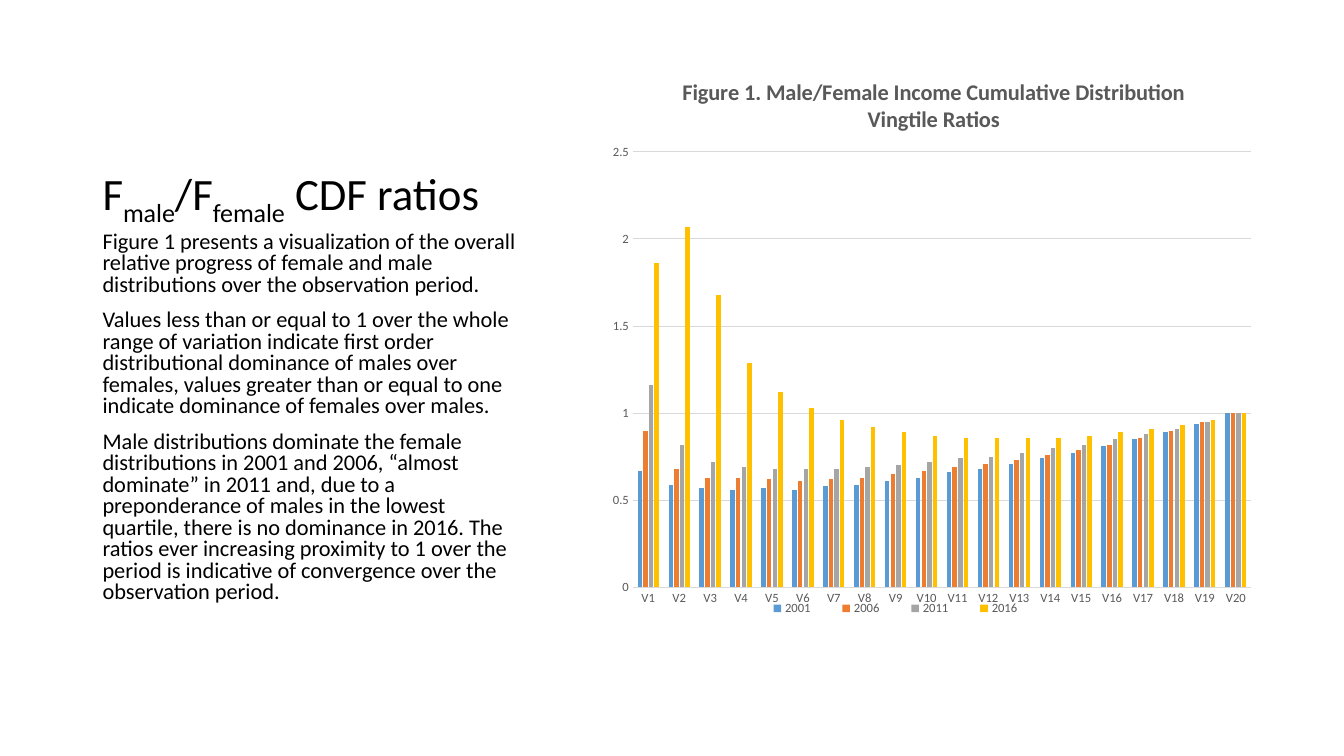
from lxml.etree import SubElement
from pptx import Presentation
from pptx.chart.data import CategoryChartData
from pptx.dml.color import RGBColor
from pptx.enum.chart import XL_CHART_TYPE, XL_LEGEND_POSITION, XL_TICK_MARK
from pptx.enum.text import MSO_ANCHOR, MSO_AUTO_SIZE, PP_ALIGN
from pptx.oxml.ns import qn
from pptx.util import Cm, Pt

FONT = "Calibri"
BLACK = RGBColor(0x00, 0x00, 0x00)
GRAY = RGBColor(0x59, 0x59, 0x59)
LIGHT_GRAY = RGBColor(0xD9, 0xD9, 0xD9)
BLUE = RGBColor(0x5B, 0x9B, 0xD5)
ORANGE = RGBColor(0xED, 0x7D, 0x31)
SILVER = RGBColor(0xA5, 0xA5, 0xA5)
GOLD = RGBColor(0xFF, 0xC0, 0x00)

TITLE_PARTS = [("F", 0), ("male", -25000), ("/F", 0), ("female", -25000), (" CDF ratios", 0)]
BODY_TEXTS = [
    "Figure 1 presents a visualization of the overall relative progress of female and male "
    "distributions over the observation period.",
    "Values less than or equal to 1 over the whole range of variation indicate first order "
    "distributional dominance of males over females, values greater than or equal to one "
    "indicate dominance of females over males.",
    "Male distributions dominate the female distributions in 2001 and 2006, “almost dominate” "
    "in 2011 and, due to a preponderance of males in the lowest quartile, there is no dominance "
    "in 2016. The ratios ever increasing proximity to 1 over the period is indicative of "
    "convergence over the observation period.",
]
CHART_TITLE = "Figure 1. Male/Female Income Cumulative Distribution\vVingtile Ratios"
RATIOS = [
    ("2001", BLUE, [0.67, 0.59, 0.57, 0.56, 0.57, 0.56, 0.58, 0.59, 0.61, 0.63,
                    0.66, 0.68, 0.71, 0.74, 0.77, 0.81, 0.85, 0.89, 0.94, 1]),
    ("2006", ORANGE, [0.9, 0.68, 0.63, 0.63, 0.62, 0.61, 0.62, 0.63, 0.65, 0.67,
                      0.69, 0.71, 0.73, 0.76, 0.79, 0.82, 0.86, 0.9, 0.95, 1]),
    ("2011", SILVER, [1.16, 0.82, 0.72, 0.69, 0.68, 0.68, 0.68, 0.69, 0.7, 0.72,
                      0.74, 0.75, 0.77, 0.8, 0.82, 0.85, 0.88, 0.91, 0.95, 1]),
    ("2016", GOLD, [1.86, 2.07, 1.68, 1.29, 1.12, 1.03, 0.96, 0.92, 0.89, 0.87,
                    0.86, 0.86, 0.86, 0.86, 0.87, 0.89, 0.91, 0.93, 0.96, 1]),
]


def format_font(font, size, color, bold=False):
    font.name = FONT
    font.size = Pt(size)
    font.bold = bold
    font.color.rgb = color


def place_box(box, left, top, width, height, anchor):
    box.left, box.top, box.width, box.height = Cm(left), Cm(top), Cm(width), Cm(height)
    frame = box.text_frame
    frame.word_wrap = True
    frame.auto_size = MSO_AUTO_SIZE.NONE
    frame.vertical_anchor = anchor


def add_span(para, text, size, baseline=0):
    span = para.add_run()
    span.text = text
    format_font(span.font, size, BLACK)
    if baseline:
        span._r.get_or_add_rPr().set("baseline", str(baseline))


def write_title(box):
    para = box.text_frame.paragraphs[0]
    para.alignment = PP_ALIGN.LEFT
    para.line_spacing = 0.9
    for text, baseline in TITLE_PARTS:
        add_span(para, text, 32, baseline)


def write_body(box):
    frame = box.text_frame
    for number, text in enumerate(BODY_TEXTS):
        para = frame.add_paragraph() if number else frame.paragraphs[0]
        para.line_spacing = 0.8
        para.space_before = Pt(10)
        add_span(para, text, 16)


def set_layout(element, index, **settings):
    for old in element.findall(qn("c:layout")):
        element.remove(old)
    layout = SubElement(element, qn("c:layout"))
    manual = SubElement(layout, qn("c:manualLayout"))
    for name, value in settings.items():
        SubElement(manual, qn(f"c:{name}")).set("val", str(value))
    element.insert(index, layout)


def format_axis(axis):
    axis.major_tick_mark = axis.minor_tick_mark = XL_TICK_MARK.NONE
    format_font(axis.tick_labels.font, 9, GRAY)


def add_ratio_chart(page):
    data = CategoryChartData()
    data.categories = [f"V{number}" for number in range(1, 21)]
    for year, _, values in RATIOS:
        data.add_series(year, values)
    chart = page.shapes.add_chart(XL_CHART_TYPE.COLUMN_CLUSTERED, Cm(15.11), Cm(1.27),
                                  Cm(16.76), Cm(15.04), data).chart
    format_font(chart.font, 10, BLACK)

    title = chart.chart_title
    title.text_frame.text = CHART_TITLE.split("\v")[0]
    para = title.text_frame.paragraphs[0]
    para.add_line_break()
    para.add_run().text = CHART_TITLE.split("\v")[1]
    for span in para.runs:
        format_font(span.font, 16, GRAY, bold=True)
    title.include_in_layout = False

    plot = chart.plots[0]
    plot.gap_width = 219
    plot.overlap = -27
    plot.vary_by_categories = False
    for series, (_, color, _) in zip(plot.series, RATIOS):
        series.format.fill.solid()
        series.format.fill.fore_color.rgb = color

    format_axis(chart.category_axis)
    format_axis(chart.value_axis)
    chart.value_axis.minimum_scale = 0
    chart.value_axis.maximum_scale = 2.5
    chart.value_axis.major_unit = 0.5
    chart.value_axis.format.line.fill.background()
    for line in (chart.category_axis.format.line, chart.value_axis.major_gridlines.format.line):
        line.color.rgb = LIGHT_GRAY
        line.width = Pt(0.75)

    chart.has_legend = True
    chart.legend.position = XL_LEGEND_POSITION.BOTTOM
    chart.legend.include_in_layout = False
    format_font(chart.legend.font, 9, GRAY)

    set_layout(title._element, 1, xMode="edge", yMode="edge", x=0.12, y=0.04)
    set_layout(chart._chartSpace.chart.plotArea, 0, layoutTarget="inner",
               xMode="edge", yMode="edge", x=0.05, y=0.17, w=0.93, h=0.73)
    set_layout(chart.legend._element, 1, xMode="edge", yMode="edge",
               x=0.22, y=0.92, w=0.45, h=0.03)


def main():
    deck = Presentation()
    deck.slide_width, deck.slide_height = Cm(33.87), Cm(19.05)
    page = deck.slides.add_slide(deck.slide_layouts.get_by_name("Content with Caption"))
    title, content, body = page.placeholders
    content._element.getparent().remove(content._element)
    place_box(title, 2.33, 1.27, 10.92, 4.45, MSO_ANCHOR.BOTTOM)
    write_title(title)
    place_box(body, 2.33, 5.72, 10.92, 10.59, MSO_ANCHOR.TOP)
    write_body(body)
    add_ratio_chart(page)
    deck.save("out.pptx")


if __name__ == "__main__":
    main()
